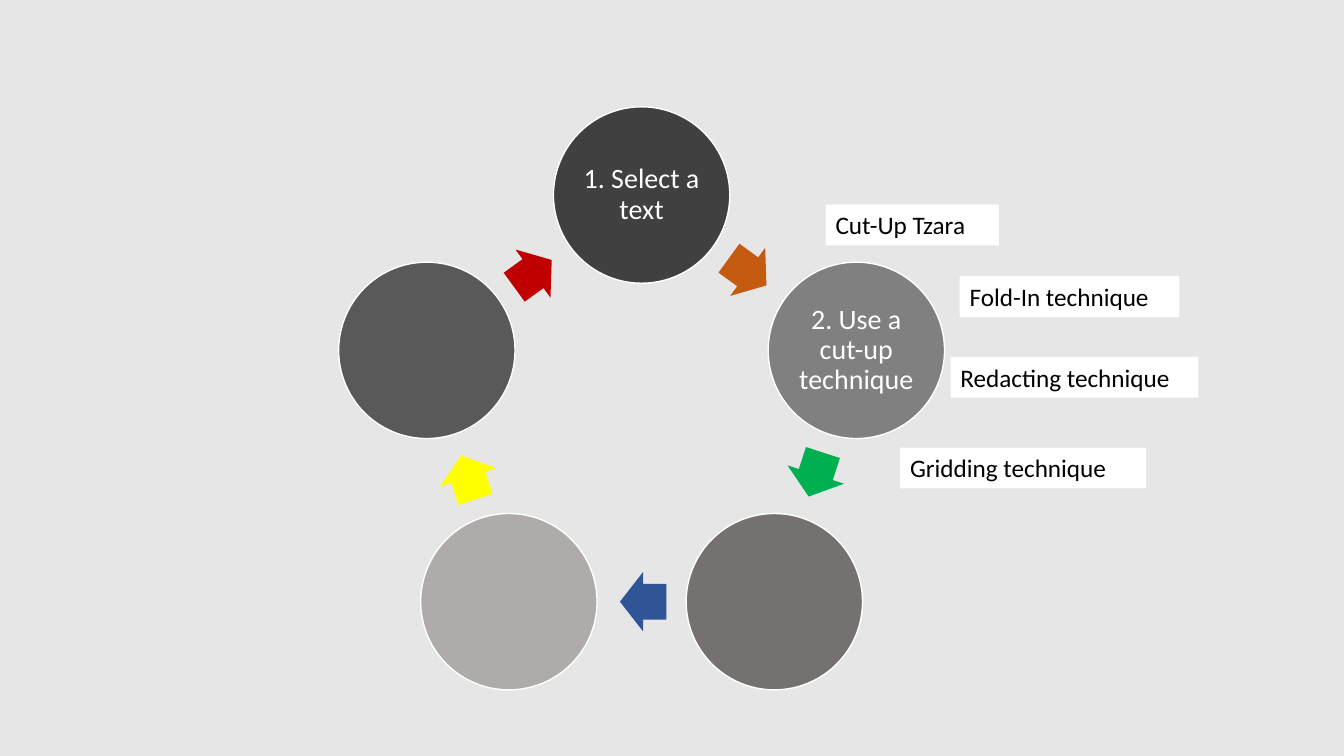
import math

from pptx import Presentation, util as u
from pptx.dml.color import RGBColor
from pptx.enum import shapes, text

# Grid: square cells of a tenth of an inch
CELL = u.Inches(0.1)
SLIDE_COLS, SLIDE_ROWS = 133.33, 75

# Ring of steps, in cells
CENTRE_COL, CENTRE_ROW = 63.65, 41.65
RADIUS_COLS, RADIUS_ROWS = 22.4, 22.3
STEP_SIZE = 17.5
ARROW_LENGTH, ARROW_WIDTH, ARROW_LAG = 4.6, 5.9, 0.15
LABEL_ROWS = 4.05

BACKGROUND = RGBColor(0xE7, 0xE6, 0xE6)
WHITE = RGBColor(0xFF, 0xFF, 0xFF)
BLACK = RGBColor(0x00, 0x00, 0x00)
CHARCOAL = RGBColor(0x40, 0x40, 0x40)
MID_GREY = RGBColor(0x80, 0x80, 0x80)
WARM_GREY = RGBColor(0x76, 0x71, 0x71)
LIGHT_GREY = RGBColor(0xAF, 0xAB, 0xAB)
DARK_GREY = RGBColor(0x59, 0x59, 0x59)
ORANGE = RGBColor(0xC5, 0x5A, 0x11)
GREEN = RGBColor(0x00, 0xB0, 0x50)
BLUE = RGBColor(0x2F, 0x55, 0x97)
YELLOW = RGBColor(0xFF, 0xFF, 0x00)
RED = RGBColor(0xC0, 0x00, 0x00)

# Wording and colour of each step, with the colour of the arrow leaving it
STEPS = [
    ("1. Select a text", CHARCOAL, ORANGE),
    ("2. Use a cut-up technique", MID_GREY, GREEN),
    ("", WARM_GREY, BLUE),
    ("", LIGHT_GREY, YELLOW),
    ("", DARK_GREY, RED),
]

# Technique, left column, top row, width in columns
TECHNIQUES = [
    ("Cut-Up Tzara", 81.9, 20.3, 17.2),
    ("Fold-In technique", 95.2, 27.4, 21.8),
    ("Gridding technique", 89.3, 44.4, 24.4),
    ("Redacting technique", 94.3, 35.4, 24.6),
]

STEP_FONT = {"name": "Calibri", "size": u.Pt(20)}
LABEL_FONT = {"name": "Calibri", "size": u.Pt(18)}
STEP_FRAME = {
    "word_wrap": True,
    "vertical_anchor": text.MSO_ANCHOR.MIDDLE,
    **dict.fromkeys(
        ("margin_left", "margin_right", "margin_top", "margin_bottom"), u.Inches(0.03)
    ),
}
LABEL_FRAME = {"word_wrap": True, "auto_size": text.MSO_AUTO_SIZE.SHAPE_TO_FIT_TEXT}
STEP_PARAGRAPH = {"alignment": text.PP_ALIGN.CENTER, "line_spacing": 0.9}


def apply(target, formats):
    for name, value in formats.items():
        setattr(target, name, value)


def cells(*counts):
    return [round(count * CELL) for count in counts]


def paint(shape, colour):
    shape.fill.solid()
    shape.fill.fore_color.rgb = colour


def write(shape, wording, frame, paragraph, font, colour):
    apply(shape.text_frame, frame)
    line = shape.text_frame.paragraphs[0]
    line.text = wording
    apply(line, paragraph)
    apply(line.font, font)
    line.font.color.rgb = colour


def add_centred(slide, kind, centre, width, height, colour):
    col, row = centre
    shape = slide.shapes.add_shape(
        kind, *cells(col - width / 2, row - height / 2, width, height)
    )
    shape.shadow.inherit = False
    paint(shape, colour)
    return shape


def step_centre(index):
    angle = math.tau * index / len(STEPS)
    return (
        CENTRE_COL + RADIUS_COLS * math.sin(angle),
        CENTRE_ROW - RADIUS_ROWS * math.cos(angle),
    )


def add_step(slide, index, wording, colour):
    step = add_centred(
        slide, shapes.MSO_SHAPE.OVAL, step_centre(index), STEP_SIZE, STEP_SIZE, colour
    )
    step.line.color.rgb = WHITE
    step.line.width = u.Pt(1)
    if wording:
        write(step, wording, STEP_FRAME, STEP_PARAGRAPH, STEP_FONT, WHITE)


def add_step_arrow(slide, index, colour):
    # Just behind the midpoint between two steps, along the ring
    turn = 360 * (index + 0.5) / len(STEPS)
    heading = math.radians(turn)
    ends = zip(step_centre(index), step_centre(index + 1))
    col, row = (sum(pair) / 2 for pair in ends)
    centre = (col - ARROW_LAG * math.cos(heading), row - ARROW_LAG * math.sin(heading))
    arrow = add_centred(
        slide, shapes.MSO_SHAPE.RIGHT_ARROW, centre, ARROW_LENGTH, ARROW_WIDTH, colour
    )
    arrow.adjustments[0] = 0.6
    arrow.adjustments[1] = 0.5
    arrow.rotation = turn
    arrow.line.fill.background()


def add_technique(slide, wording, col, row, width):
    label = slide.shapes.add_textbox(*cells(col, row, width, LABEL_ROWS))
    paint(label, WHITE)
    write(label, wording, LABEL_FRAME, {}, LABEL_FONT, BLACK)


def main():
    deck = Presentation()
    deck.slide_width, deck.slide_height = cells(SLIDE_COLS, SLIDE_ROWS)
    slide = deck.slides.add_slide(deck.slide_layouts[6])
    paint(slide.background, BACKGROUND)

    # Cycle of steps and arrows
    for index, (wording, step_colour, arrow_colour) in enumerate(STEPS):
        add_step(slide, index, wording, step_colour)
        add_step_arrow(slide, index, arrow_colour)

    # Techniques beside the second step
    for technique in TECHNIQUES:
        add_technique(slide, *technique)

    deck.save("out.pptx")


if __name__ == "__main__":
    main()
